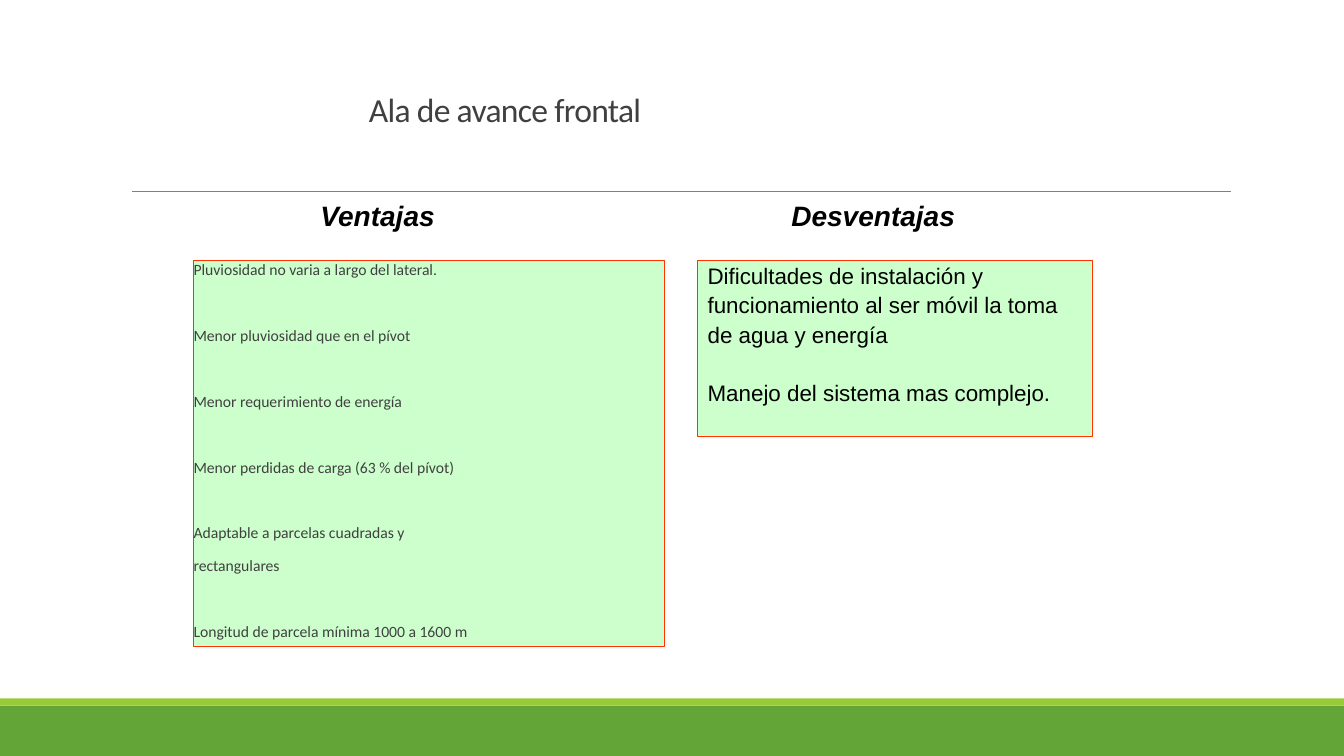
"""Build the slide on pros and cons of a linear-move irrigation wing."""
from lxml.etree import SubElement
from pptx import Presentation
from pptx.dml.color import RGBColor
from pptx.enum.shapes import MSO_CONNECTOR, MSO_SHAPE
from pptx.enum.text import MSO_ANCHOR, PP_ALIGN
from pptx.oxml.ns import qn
from pptx.util import Inches, Pt

TITLE = "Ala de avance frontal"
HEADS = [("Ventajas", 3.08, 1.83), ("Desventajas", 7.75, 1.92)]
PROS = [
    ["Pluviosidad no varia a largo del lateral."],
    ["Menor pluviosidad que en el pívot"],
    ["Menor requerimiento de energía"],
    ["Menor perdidas de carga (63 % del pívot)"],
    ["Adaptable a parcelas cuadradas y", "rectangulares"],
    ["Longitud de parcela mínima 1000 a 1600 m"],
]
CONS = [
    ["Dificultades de instalación y", "funcionamiento al ser móvil la toma", "de agua y energía"],
    ["Manejo del sistema mas complejo."],
]
BANDS = [(7, 0.5, "63A537"), (6.93, 0.07, "99CB38")]
PANEL, EDGE, RULE = "CCFFCC", "FF3300", "808080"
DARK, BLACK = "404040", "000000"

deck = Presentation()
deck.slide_width, deck.slide_height = Inches(13.33), Inches(7.5)
slide = deck.slides.add_slide(deck.slide_layouts[6])
shapes = slide.shapes


def tint(code):
    return RGBColor.from_string(code)


def place(*box):
    return [Inches(n) for n in box]


def block(box, fill, edge=None):
    shape = shapes.add_shape(MSO_SHAPE.RECTANGLE, *place(*box))
    shape.shadow.inherit = False
    shape.fill.solid()
    shape.fill.fore_color.rgb = tint(fill)
    if edge:
        shape.line.color.rgb = tint(edge)
        shape.line.width = Pt(0.75)
    else:
        shape.line.fill.background()
    return shape


def write(para, text, size, face, color, bold=False):
    para.alignment = PP_ALIGN.LEFT
    run = para.add_run()
    run.text = text
    font = run.font
    font.size, font.name = Pt(size), face
    font.color.rgb = tint(color)
    font.bold = font.italic = bold
    return run


def label(box, *style):
    frame = shapes.add_textbox(*place(*box)).text_frame
    frame.word_wrap = True
    return frame, write(frame.paragraphs[0], *style)


def panel(box, groups, style, lead, near, far, after=0, side=0.1):
    frame = block(box, PANEL, EDGE).text_frame
    frame.word_wrap = True
    frame.vertical_anchor = MSO_ANCHOR.TOP
    frame.margin_left = frame.margin_right = Inches(side)
    first = True
    for group in groups:
        for row, text in enumerate(group):
            para = frame.paragraphs[0] if first else frame.add_paragraph()
            para.line_spacing = lead
            para.space_before = Pt(0 if first else near if row else far)
            para.space_after = Pt(after)
            write(para, text, *style)
            first = False


for top, tall, color in BANDS:
    block((0, top, 13.33, tall), color)

rule = shapes.add_connector(MSO_CONNECTOR.STRAIGHT, *place(1.31, 1.9, 12.21, 1.9))
rule.line.color.rgb = tint(RULE)
rule.line.width = Pt(0.5)
SubElement(rule._element.spPr, qn("a:effectLst"))

frame, run = label((3.56, 0.58, 6.19, 0.75), TITLE, 24, "Calibri", DARK)
frame.vertical_anchor = MSO_ANCHOR.BOTTOM
frame.paragraphs[0].line_spacing = 0.85
run.font._element.set("spc", "-50")

for text, left, wide in HEADS:
    label((left, 1.92, wide, 0.43), text, 20, "Arial", BLACK, True)

panel((1.92, 2.58, 4.67, 3.83), PROS, (11.2, "Calibri", DARK), 0.7, 12, 35.6, 2, 0)
panel((6.92, 2.58, 3.92, 1.75), CONS, (16, "Arial", BLACK), 0.9, 3.9, 24.4)

deck.save("out.pptx")
